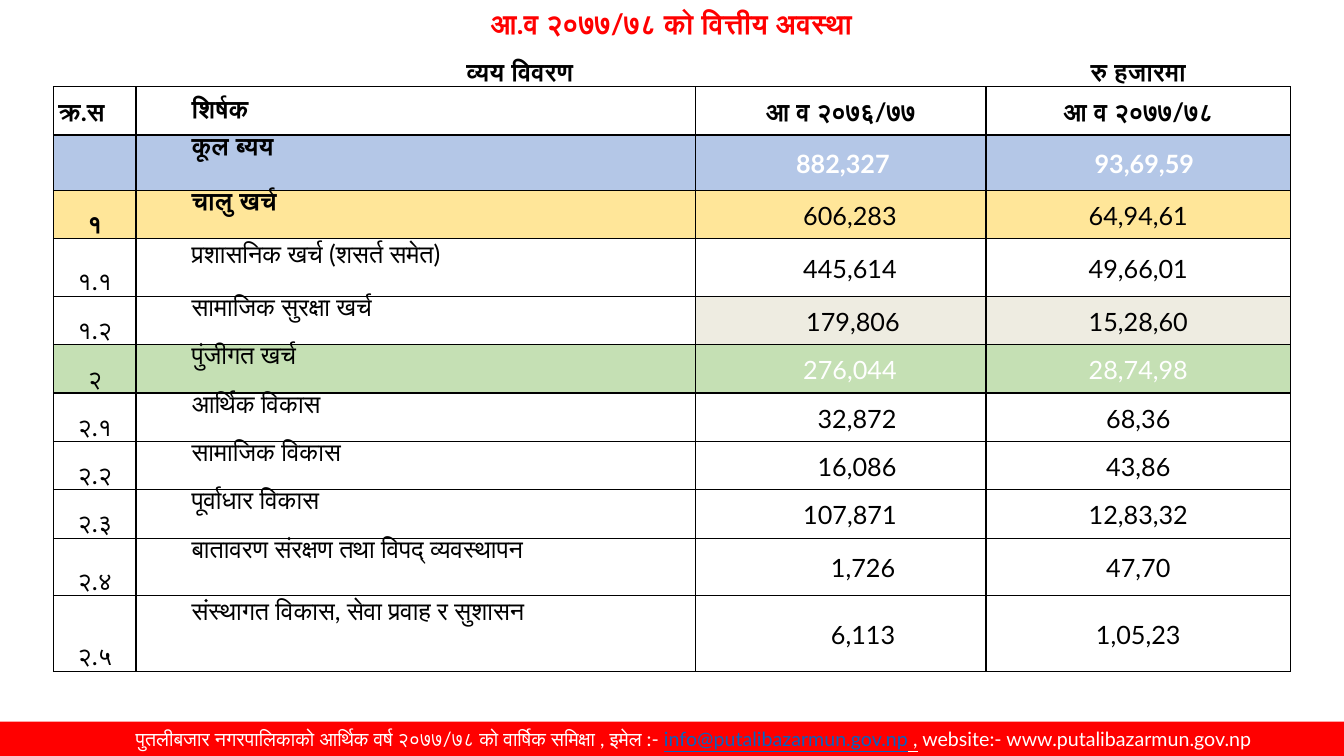
from lxml import etree
from pptx import Presentation
from pptx.dml.color import RGBColor
from pptx.enum.shapes import MSO_SHAPE
from pptx.enum.text import MSO_ANCHOR, PP_ALIGN
from pptx.oxml.ns import qn
from pptx.util import Inches, Pt

TOP, MIDDLE, BOTTOM = MSO_ANCHOR.TOP, MSO_ANCHOR.MIDDLE, MSO_ANCHOR.BOTTOM
LEFT, CENTER = PP_ALIGN.LEFT, PP_ALIGN.CENTER
COLORS = {
    "red": "FF0000", "white": "FFFFFF", "black": "000000", "link": "0563C1",
    "blue": "B4C7E7", "yellow": "FFE699", "green": "C5E0B4", "beige": "EEECE1",
}


def add_run(paragraph, text, size, color, bold=False, underline=False):
    run = paragraph.add_run()
    run.text = text
    run.font.name = "Lato"
    run.font.size = Pt(size)
    run.font.bold = bold
    run.font.underline = underline
    run.font.color.rgb = RGBColor.from_string(COLORS[color])


def indent(paragraph, inches):
    properties = paragraph._p.get_or_add_pPr()
    properties.set("marL", str(Inches(inches)))
    properties.set("indent", "0")


presentation = Presentation()
presentation.slide_width = Inches(13.33)
presentation.slide_height = Inches(7.5)
slide = presentation.slides.add_slide(presentation.slide_layouts[5])

# Title
title = slide.shapes.title
title.left, title.top = Inches(0.91), Inches(0)
title.width, title.height = Inches(11.5), Inches(0.5)
title.text_frame.vertical_anchor = MIDDLE
paragraph = title.text_frame.paragraphs[0]
paragraph.alignment = CENTER
paragraph.line_spacing = 0.9
add_run(paragraph, "आ.व २०७७/७८ को वित्तीय अवस्था", 20, "red", bold=True)

# Footer band
footer = slide.shapes.add_shape(
    MSO_SHAPE.RECTANGLE, Inches(0), Inches(7.16), Inches(13.33), Inches(0.34))
footer.shadow.inherit = False
footer.fill.solid()
footer.fill.fore_color.rgb = RGBColor.from_string(COLORS["red"])
footer.line.fill.background()
footer.text_frame.word_wrap = True
footer.text_frame.vertical_anchor = MIDDLE
paragraph = footer.text_frame.paragraphs[0]
paragraph.alignment = CENTER
indent(paragraph, 0.43)
for text, color, underline in [
    ("पुतलीबजार नगरपालिकाको आर्थिक वर्ष २०७७/७८ को वार्षिक समिक्षा , इमेल :- ", "white", False),
    ("info@putalibazarmun.gov.np", "link", True),
    (" ,", "white", True),
    (" website:- www.putalibazarmun.gov.np", "white", False),
]:
    add_run(paragraph, text, 14, color, underline=underline)

# Expenditure table: height, four texts, indents of the two amounts
ROWS = [
    (0.43, ("व्यय विवरण", "", "", "रु हजारमा"), (0, 0)),
    (0.48, ("क्र.स", "शिर्षक", "आ व २०७६/७७", "आ व २०७७/७८"), (0, 0)),
    (0.55, ("", "कूल ब्यय", "882,327", "93,69,59"), (0.04, 0.12)),
    (0.48, ("१", "चालु खर्च", "606,283", "64,94,61"), (0.18, 0)),
    (0.57, ("१.१", "प्रशासनिक खर्च (शसर्त समेत)", "445,614", "49,66,01"), (0.18, 0)),
    (0.48, ("१.२", "सामाजिक सुरक्षा खर्च", "179,806", "15,28,60"), (0.24, 0)),
    (0.48, ("२", "पुंजीगत खर्च", "276,044", "28,74,98"), (0.18, 0)),
    (0.48, ("२.१", "आर्थिक विकास", "32,872", "68,36"), (0.32, 0)),
    (0.48, ("२.२", "सामाजिक विकास", "16,086", "43,86"), (0.32, 0)),
    (0.48, ("२.३", "पूर्वाधार विकास", "107,871", "12,83,32"), (0.18, 0)),
    (0.57, ("२.४", "बातावरण संरक्षण तथा विपद् व्यवस्थापन", "1,726", "47,70"), (0.44, 0)),
    (0.75, ("२.५", "संस्थागत विकास, सेवा प्रवाह र सुशासन", "6,113", "1,05,23"), (0.44, 0)),
]
COLUMN_WIDTHS = [0.82, 5.55, 2.88, 3.02]
CAPTION, HEADER, TOTAL, CURRENT, SECURITY, CAPITAL = 0, 1, 2, 3, 5, 6
ROW_FILLS = {TOTAL: "blue", CURRENT: "yellow", CAPITAL: "green"}

table = slide.shapes.add_table(
    len(ROWS), len(COLUMN_WIDTHS),
    Inches(0.53), Inches(0.43), Inches(12.27), Inches(6.25)).table
table.first_row = False
table.horz_banding = False
for column, width in zip(table.columns, COLUMN_WIDTHS):
    column.width = Inches(width)
table.cell(CAPTION, 0).merge(table.cell(CAPTION, 2))

for row, (height, texts, amount_indents) in enumerate(ROWS):
    table.rows[row].height = Inches(height)
    for column, text in enumerate(texts):
        cell = table.cell(row, column)
        is_number = column == 0 and row > HEADER
        is_heading = column == 1 and row > CAPTION
        is_amount = column >= 2

        cell.margin_left = cell.margin_right = Inches(0.01 if is_number else 0.05)
        cell.margin_top = Inches(0.01 if is_number else 0)
        cell.margin_bottom = Inches(0)
        if row == CAPTION or is_number:
            cell.vertical_anchor = BOTTOM
        elif is_heading and row > HEADER:
            cell.vertical_anchor = TOP
        else:
            cell.vertical_anchor = MIDDLE

        sides = ["a:lnB"] if row == CAPTION else ["a:lnL", "a:lnR", "a:lnT", "a:lnB"]
        for side in sides:
            border = etree.SubElement(cell._tc.get_or_add_tcPr(), qn(side), w=str(Pt(1)))
            line_fill = etree.SubElement(border, qn("a:solidFill"))
            etree.SubElement(line_fill, qn("a:srgbClr"), val=COLORS["black"])

        fill = "beige" if row == SECURITY and is_amount else ROW_FILLS.get(row)
        if fill:
            cell.fill.solid()
            cell.fill.fore_color.rgb = RGBColor.from_string(COLORS[fill])
        else:
            cell.fill.background()

        if not text:
            continue
        paragraph = cell.text_frame.paragraphs[0]
        is_left = is_heading or (row == HEADER and column == 0)
        paragraph.alignment = LEFT if is_left else CENTER
        if is_heading:
            paragraph.level = 1
            indent(paragraph, 0.5)
        elif not is_number:
            paragraph.line_spacing = 1.07
        if is_amount:
            indent(paragraph, amount_indents[column - 2])
        color = "white" if is_amount and row in (TOTAL, CAPITAL) else "black"
        bold = row <= TOTAL or (row == CURRENT and not is_amount)
        add_run(paragraph, text, 18, color, bold=bold)

presentation.save("out.pptx")
